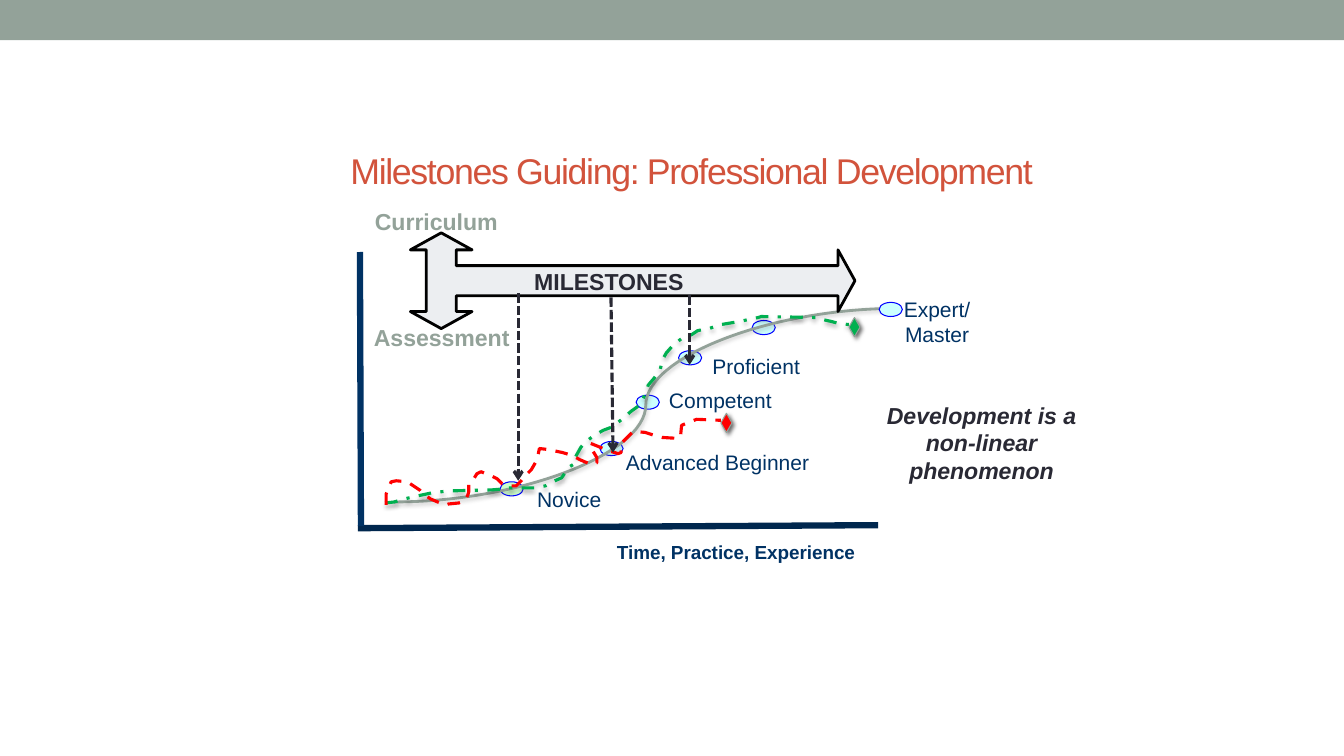
from dataclasses import dataclass

from lxml.etree import SubElement
from pptx import Presentation
from pptx.dml.color import RGBColor
from pptx.enum.dml import MSO_LINE
from pptx.enum.shapes import MSO_CONNECTOR, MSO_SHAPE
from pptx.enum.text import MSO_ANCHOR, PP_ALIGN
from pptx.oxml.ns import qn
from pptx.util import Inches, Pt


@dataclass(frozen=True)
class Theme:
    font: str = "Arial"
    sage: str = "93A299"
    title: str = "D2533C"
    navy: str = "003264"
    deep_navy: str = "00274E"
    ink: str = "292934"
    black: str = "000000"
    blue: str = "0000FF"
    pale_cyan: str = "CCFFFF"
    pale_green: str = "CCFFCC"
    pale_gray: str = "ECEEF1"
    shadow_gray: str = "808080"
    green: str = "00B050"
    red: str = "FF0000"
    title_size: float = 25.5
    heading_size: float = 16.5
    stage_size: float = 15
    axis_size: float = 13.5


@dataclass(frozen=True)
class Box:
    left: float
    top: float
    width: float
    height: float

    def point(self, x, y):
        return Inches(self.left + x), Inches(self.top + y)

    def area(self, x, y, width, height):
        return *self.point(x, y), Inches(width), Inches(height)


THEME = Theme()
MARKER = (0.23, 0.14)
DIAMOND = (0.11, 0.19)

# Inches from the left and top of the chart box
STEADY_PATH = [
    (0.32, 2.99), (0.41, 2.98), (0.51, 2.95), (0.64, 2.92), (0.78, 2.89), (0.95, 2.87),
    (1.38, 2.86), (1.5, 2.85), (1.56, 2.84), (1.81, 2.84), (1.91, 2.82), (1.98, 2.78),
    (2.07, 2.74), (2.12, 2.67), (2.15, 2.63), (2.2, 2.6), (2.21, 2.53), (2.26, 2.44),
    (2.3, 2.39), (2.38, 2.33), (2.48, 2.27), (2.56, 2.24), (2.67, 2.16), (2.76, 2.08),
    (2.83, 2.03), (2.87, 1.97), (2.9, 1.91), (2.93, 1.82), (2.99, 1.75), (3.05, 1.66),
    (3.07, 1.57), (3.11, 1.5), (3.18, 1.42), (3.26, 1.36), (3.36, 1.32), (3.42, 1.28),
    (3.53, 1.26), (3.65, 1.22), (3.83, 1.19), (4.02, 1.15), (4.05, 1.14), (4.61, 1.15),
    (4.66, 1.17), (4.75, 1.19), (4.82, 1.21), (4.92, 1.22),
]
ERRATIC_PATH = [
    (0.33, 3.01), (0.33, 2.9), (0.35, 2.85), (0.38, 2.78), (0.43, 2.77), (0.54, 2.78),
    (0.6, 2.82), (0.66, 2.86), (0.7, 2.9), (0.77, 2.95), (0.84, 2.98), (0.92, 3.01),
    (0.95, 3), (1.05, 2.99), (1.11, 2.97), (1.14, 2.91), (1.15, 2.88), (1.15, 2.8),
    (1.2, 2.75), (1.23, 2.7), (1.27, 2.68), (1.37, 2.72), (1.43, 2.75), (1.48, 2.8),
    (1.56, 2.82), (1.62, 2.82), (1.67, 2.77), (1.71, 2.72), (1.77, 2.66), (1.81, 2.59),
    (1.83, 2.55), (1.85, 2.45), (1.94, 2.46), (2.08, 2.49), (2.18, 2.52), (2.25, 2.56),
    (2.32, 2.59), (2.37, 2.61), (2.42, 2.59), (2.42, 2.54), (2.39, 2.49), (2.35, 2.43),
    (2.36, 2.4), (2.46, 2.44), (2.53, 2.47), (2.63, 2.5), (2.66, 2.49), (2.66, 2.4),
    (2.72, 2.34), (2.78, 2.28), (2.9, 2.29), (2.99, 2.32), (3.07, 2.34), (3.23, 2.35),
    (3.25, 2.33), (3.26, 2.22), (3.33, 2.19), (3.41, 2.16), (3.65, 2.17),
]


def set_effects(shape, shadow=None):
    """Replace the theme shadow by none, or by (colour, opacity %, blur pt, distance pt, degrees)."""
    effects = SubElement(shape.element.spPr, qn("a:effectLst"))
    if shadow:
        color, opacity, blur, distance, angle = shadow
        outer = SubElement(effects, qn("a:outerShdw"), blurRad=str(Pt(blur)),
                           dist=str(Pt(distance)), dir=str(angle * 60000), rotWithShape="0")
        tint = SubElement(outer, qn("a:srgbClr"), val=color)
        SubElement(tint, qn("a:alpha"), val=str(opacity * 1000))


def style(shape, line, width=0.75, fill=None, dash=None, shadow=None):
    shape.line.color.rgb = RGBColor.from_string(line)
    shape.line.width = Pt(width)
    if dash:
        shape.line.dash_style = dash
    if fill:
        shape.fill.solid()
        shape.fill.fore_color.rgb = RGBColor.from_string(fill)
    set_effects(shape, shadow)


def add_preset(page, kind, area, **look):
    shape = page.shapes.add_shape(kind, *area)
    style(shape, **look)
    return shape


def add_line(page, start, end, kind=MSO_CONNECTOR.STRAIGHT, arrow=False, **look):
    line = page.shapes.add_connector(kind, *start, *end)
    style(line, **look)
    if arrow:
        SubElement(line.line._get_or_add_ln(), qn("a:tailEnd"), type="arrow")


def add_text(page, area, lines, color, size, align=PP_ALIGN.LEFT, wrap=True,
             anchor=MSO_ANCHOR.TOP, spacing=None, **emphasis):
    frame = page.shapes.add_textbox(*area).text_frame
    frame.word_wrap = wrap
    frame.vertical_anchor = anchor
    look = {"name": THEME.font, "size": Pt(size), **emphasis}
    for index, words in enumerate(lines):
        para = frame.add_paragraph() if index else frame.paragraphs[0]
        para.alignment = align
        span = para.add_run()
        span.text = words
        for name, value in look.items():
            setattr(span.font, name, value)
        span.font.color.rgb = RGBColor.from_string(color)
        if spacing:
            span.font._element.set("spc", str(spacing * 100))


def draw_header(page, box):
    add_preset(page, MSO_SHAPE.RECTANGLE, box.area(0, 0, box.width, 0.4),
               line=THEME.sage, fill=THEME.sage).line.fill.background()
    add_text(page, box.area(2.06, 1.35, 9.6, 0.68), ["Milestones Guiding: Professional Development"],
             THEME.title, THEME.title_size, PP_ALIGN.CENTER, anchor=MSO_ANCHOR.MIDDLE, spacing=-1)


def draw_axes(page, box):
    add_line(page, box.point(0.05, 3.24), box.point(5.21, 3.21), line=THEME.deep_navy, width=4.5)
    add_line(page, box.point(0.08, 3.22), box.point(0.07, 0.5), line=THEME.navy, width=4.5)
    add_text(page, box.area(2.49, 3.31, 2.62, 0.33), ["Time, Practice, Experience"],
             THEME.navy, THEME.axis_size, PP_ALIGN.CENTER, bold=True)


def draw_stages(page, box):
    labels = [
        (["Novice"], 1.72, 2.78, 0.85, 0.35),
        (["Advanced Beginner"], 2.61, 2.41, 2.05, 0.35),
        (["Competent"], 3.03, 1.79, 1.23, 0.35),
        (["Proficient"], 3.46, 1.46, 1.08, 0.35),
        (["Expert/", "Master"], 5.36, 0.89, 0.87, 0.61),
    ]
    for lines, *area in labels:
        long_label = lines == ["Advanced Beginner"]
        add_text(page, box.area(*area), lines, THEME.navy, THEME.stage_size,
                 PP_ALIGN.LEFT if long_label else PP_ALIGN.CENTER, wrap=long_label)
    markers = [(1.46, 2.78), (3.96, 1.18), (3.23, 1.48), (2.81, 1.92), (2.45, 2.38)]
    for index, corner in enumerate(markers):
        add_preset(page, MSO_SHAPE.OVAL, box.area(*corner, *MARKER), line=THEME.blue,
                   fill=THEME.pale_cyan if index else THEME.pale_green)


def draw_growth(page, box):
    """Draw the ideal curve, the two learner paths with their end marks, and the expert marker."""
    add_line(page, box.point(0.41, 2.98), box.point(5.4, 1.06), MSO_CONNECTOR.CURVE,
             line=THEME.sage, width=2, shadow=(THEME.shadow_gray, 38, 3.1, 1.6, 90))
    learners = [
        (STEADY_PATH, THEME.green, MSO_LINE.DASH_DOT, (THEME.black, 35, 3.1, 1.8, 90)),
        (ERRATIC_PATH, THEME.red, MSO_LINE.DASH, None),
    ]
    for points, color, dash, shadow in learners:
        start, *rest = [box.point(*point) for point in points]
        builder = page.shapes.build_freeform(*start)
        builder.add_line_segments(rest, close=False)
        path = builder.convert_to_shape()
        path.fill.background()
        style(path, color, 2.25, dash=dash, shadow=shadow)
    for corner, color in [((4.92, 1.15), THEME.green), ((3.65, 2.1), THEME.red)]:
        add_preset(page, MSO_SHAPE.DIAMOND, box.area(*corner, *DIAMOND), line=THEME.sage,
                   fill=color, shadow=(THEME.black, 60, 3, 2, 45))
    add_preset(page, MSO_SHAPE.OVAL, box.area(5.22, 1, *MARKER),
               line=THEME.blue, fill=THEME.pale_cyan)


def draw_milestones(page, box):
    arrow = add_preset(page, MSO_SHAPE.LEFT_RIGHT_UP_ARROW, box.area(2.3, -1.42, 0.95, 4.41),
                       line=THEME.black, width=2, fill=THEME.pale_gray)
    arrow.rotation = 90
    for index, value in enumerate((0.314, 0.322, 0.25)):
        arrow.adjustments[index] = value
    headings = [
        ("Curriculum", 0.12, 0.01, 1.54, THEME.sage),
        ("Assessment", 0.11, 1.16, 1.56, THEME.sage),
        ("MILESTONES", 1.7, 0.6, 2.27, THEME.ink),
    ]
    for words, left, top, width, color in headings:
        add_text(page, box.area(left, top, width, 0.38), [words], color,
                 THEME.heading_size, bold=True)
    drops = [((1.64, 0.91), (1.64, 2.77)), ((2.56, 0.95), (2.58, 2.49)), ((3.34, 0.93), (3.34, 1.62))]
    for start, end in drops:
        add_line(page, box.point(*start), box.point(*end), arrow=True, line=THEME.ink,
                 width=2.25, dash=MSO_LINE.SQUARE_DOT)


def draw_takeaway(page, box):
    add_text(page, box.area(0, 0, box.width, box.height),
             ["Development is a", "non-linear phenomenon"], THEME.ink, THEME.heading_size,
             PP_ALIGN.CENTER, bold=True, italic=True)


def main():
    deck = Presentation()
    deck.slide_width, deck.slide_height = Inches(13.33), Inches(7.5)
    page = deck.slides.add_slide(deck.slide_layouts[6])
    chart = Box(3.5, 2, 6.25, 3.7)
    draw_header(page, Box(0, 0, 13.33, 2.03))
    for draw in (draw_axes, draw_stages, draw_growth, draw_milestones):
        draw(page, chart)
    draw_takeaway(page, Box(8.48, 3.93, 2.51, 0.93))
    deck.save("out.pptx")


if __name__ == "__main__":
    main()
